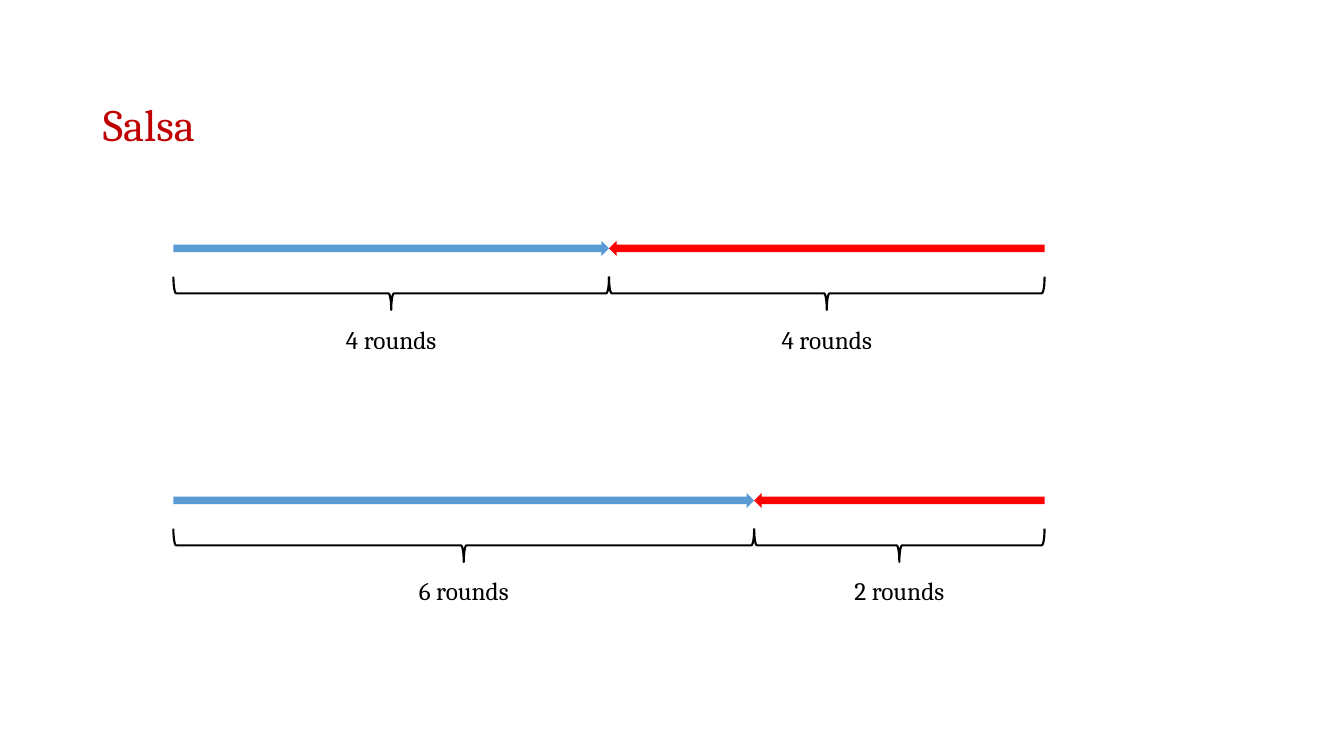
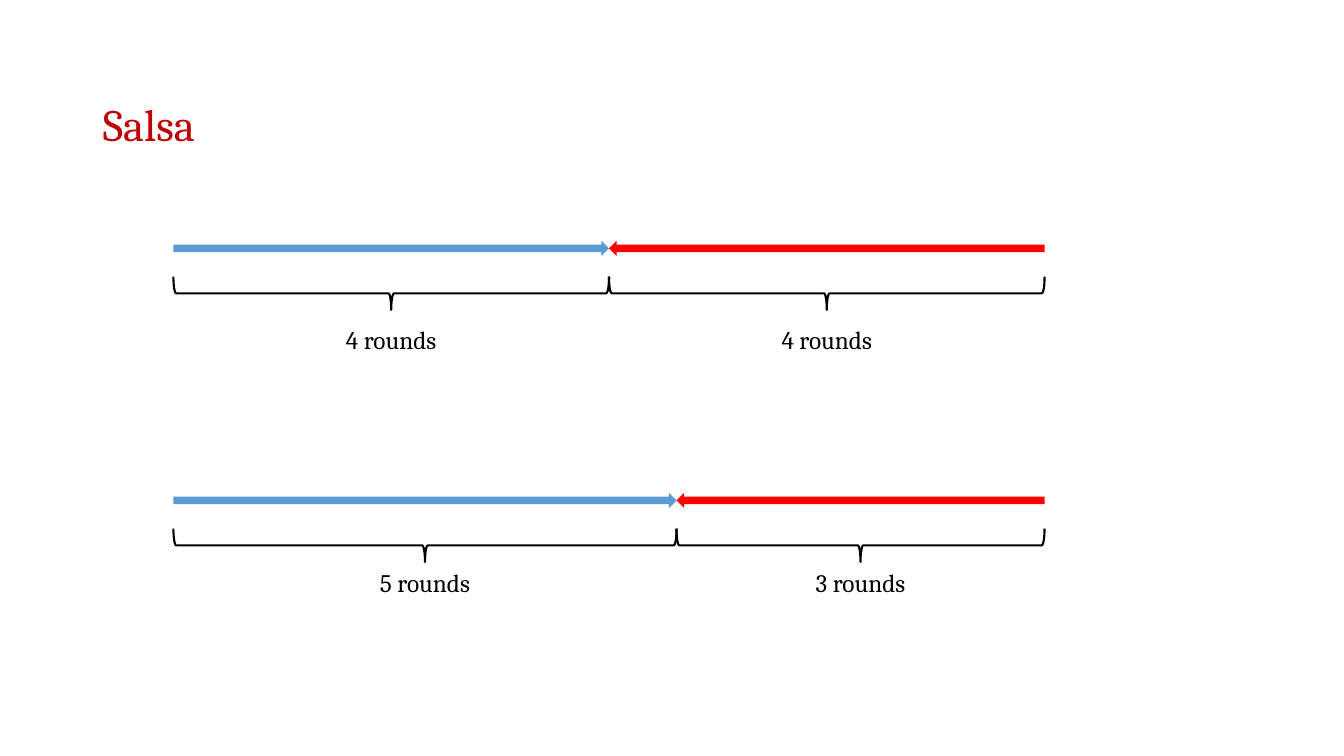
from pptx import Presentation
from pptx.dml.color import RGBColor as RGB
from pptx.enum.shapes import MSO_SHAPE as SHAPE
from pptx.enum.text import MSO_ANCHOR as ANCHOR, MSO_AUTO_SIZE as SIZE, PP_ALIGN as ALIGN
from pptx.util import Inches, Pt

FONT = "Cambria"
BLACK = RGB(0x00, 0x00, 0x00)
BLUE = RGB(0x5B, 0x9B, 0xD5)
RED = RGB(0xFF, 0x00, 0x00)
TITLE = RGB(0xC0, 0x00, 0x00)

START, END = 1.72, 10.36
THICK = 0.15
BRACE = 0.33
DROP = 0.52
LABEL = 1.6
ROWS = 2.39, 4.89
HALF = (START + END) / 2


def write(frame, text, size=18, color=BLACK, align=ALIGN.CENTER, space=1.0):
    frame.word_wrap = True
    para = frame.paragraphs[0]
    para.alignment = align
    para.line_spacing = space
    run = para.add_run()
    run.text = text
    font = run.font
    font.name, font.size = FONT, Pt(size)
    font.color.rgb = color


def place(item, left, top, width, height):
    item.left, item.top = Inches(left), Inches(top)
    item.width, item.height = Inches(width), Inches(height)


def arrow(slide, kind, left, right, top, color):
    shape = slide.shapes.add_shape(
        kind, Inches(left), Inches(top), Inches(right - left), Inches(THICK))
    shape.shadow.inherit = False
    shape.fill.solid()
    shape.fill.fore_color.rgb = color
    shape.line.fill.background()


def brace(slide, left, right, mid):
    span = right - left
    shape = slide.shapes.add_shape(
        SHAPE.LEFT_BRACE, Inches((left + right - BRACE) / 2),
        Inches(mid - span / 2), Inches(BRACE), Inches(span))
    shape.rotation = 270
    shape.shadow.inherit = False
    shape.fill.background()
    shape.line.color.rgb = BLACK
    shape.line.width = Pt(1.5)


def label(slide, text, mid, top):
    box = slide.shapes.add_textbox(
        Inches(mid - LABEL / 2), Inches(top), Inches(LABEL), Inches(0.4))
    box.text_frame.auto_size = SIZE.SHAPE_TO_FIT_TEXT
    write(box.text_frame, text)


def split(slide, top, meet, counts, gap):
    parts = (
        (SHAPE.RIGHT_ARROW, START, meet, BLUE),
        (SHAPE.LEFT_ARROW, meet, END, RED),
    )
    for (kind, left, right, color), count in zip(parts, counts):
        arrow(slide, kind, left, right, top, color)
        brace(slide, left, right, top + DROP)
        label(slide, f"{count} rounds", (left + right) / 2, top + gap)


def page(deck, layout, meet, counts, gap):
    slide = deck.slides.add_slide(layout)
    frame = slide.shapes.title.text_frame
    frame.vertical_anchor = ANCHOR.MIDDLE
    write(frame, "Salsa", size=32, color=TITLE, align=ALIGN.LEFT, space=0.9)
    split(slide, ROWS[0], HALF, (4, 4), 0.78)
    split(slide, ROWS[1], meet, counts, gap)


def main():
    deck = Presentation()
    deck.slide_width, deck.slide_height = Inches(13.33), Inches(7.5)
    layout = deck.slide_layouts.get_by_name("Title Only")
    place(layout.placeholders[0], 0.92, 0.67, 11.5, 1.18)
    page(deck, layout, 7.48, (6, 2), 0.77)
    page(deck, layout, 6.71, (5, 3), 0.69)
    deck.save("out.pptx")


if __name__ == "__main__":
    main()
